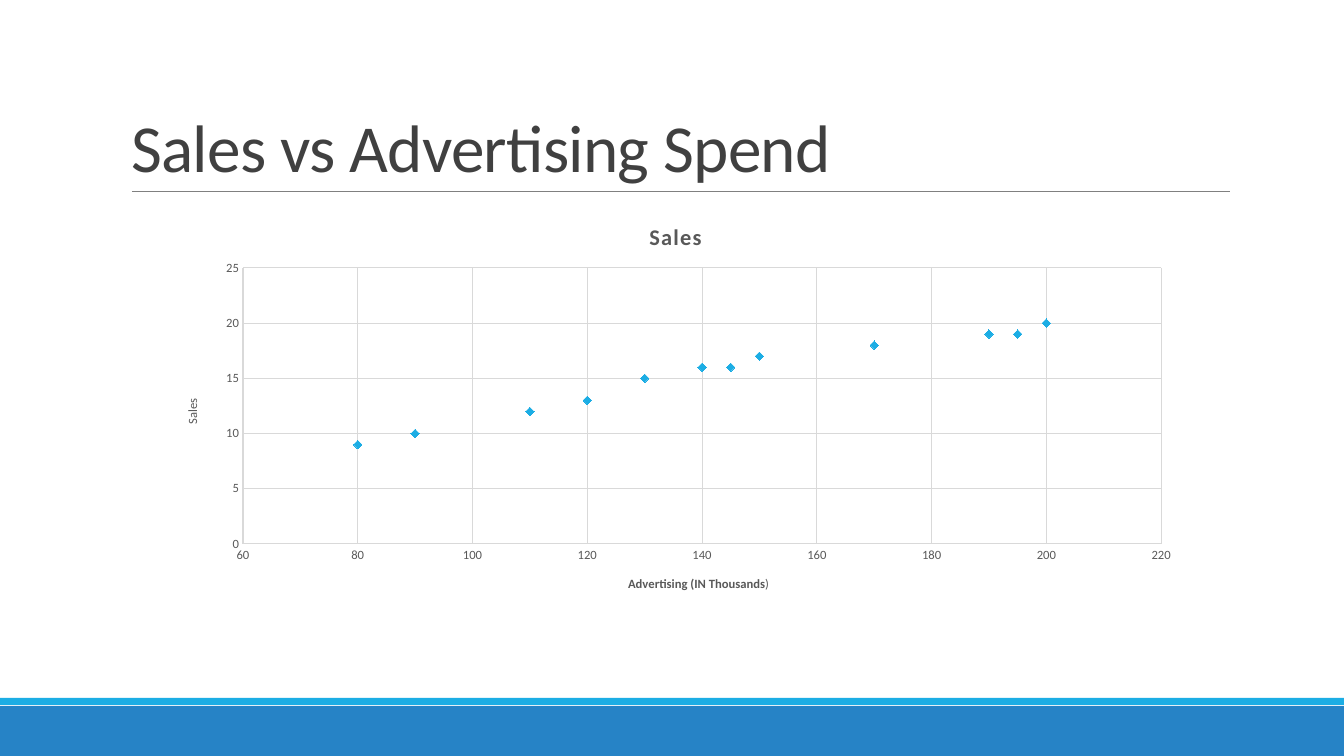
"""Build a slide with a scatter chart of sales against advertising spend."""
from lxml import etree
from pptx import Presentation
from pptx.chart.data import XyChartData
from pptx.dml.color import RGBColor
from pptx.enum.chart import XL_CHART_TYPE, XL_MARKER_STYLE, XL_TICK_MARK
from pptx.enum.shapes import MSO_CONNECTOR, MSO_SHAPE
from pptx.enum.text import MSO_ANCHOR, MSO_AUTO_SIZE, PP_ALIGN
from pptx.oxml.ns import qn
from pptx.util import Pt

PX = 9144000 / 1008
BLUE = RGBColor(0x26, 0x83, 0xC6)
CYAN = RGBColor(0x1C, 0xAD, 0xE4)
DARK = RGBColor(0x40, 0x40, 0x40)
TEXT = RGBColor(0x59, 0x59, 0x59)
RULE = RGBColor(0x80, 0x80, 0x80)
GRID = RGBColor(0xD9, 0xD9, 0xD9)
FONT = "Calibri"


def box(*lengths):
    return [round(n * PX) for n in lengths]


def write(tf, runs, size, color, spacing=0):
    p = tf.paragraphs[0]
    for text, bold in runs:
        r = p.add_run()
        r.text = text
        for name, value in {"name": FONT, "size": Pt(size), "bold": bold}.items():
            setattr(r.font, name, value)
        r.font.color.rgb = color
        r.font._element.set("spc", str(spacing))
    return p


prs = Presentation()
prs.slide_width, prs.slide_height = box(1344, 756)
s = prs.slides.add_slide(prs.slide_layouts[5])

for top, height, color in [(706, 50, BLUE), (698, 7, CYAN)]:
    sp = s.shapes.add_shape(MSO_SHAPE.RECTANGLE, *box(0, top, 1344, height))
    sp.shadow.inherit = False
    sp.fill.solid()
    sp.fill.fore_color.rgb = color
    sp.line.fill.background()

rule = s.shapes.add_connector(MSO_CONNECTOR.STRAIGHT, *box(132, 191, 1230, 191))
rule.line.color.rgb = RULE
rule.line.width = Pt(0.5)
etree.SubElement(rule._element.spPr, qn("a:effectLst"))

title = s.shapes.title
title.left, title.top, title.width, title.height = box(121, 31, 1109, 160)
tf = title.text_frame
for name, value in {"word_wrap": True, "auto_size": MSO_AUTO_SIZE.NONE,
                    "vertical_anchor": MSO_ANCHOR.BOTTOM}.items():
    setattr(tf, name, value)
p = write(tf, [("Sales vs Advertising Spend", False)], 48, DARK, -50)
p.alignment = PP_ALIGN.LEFT
p.line_spacing = 0.85

data = XyChartData()
sales = data.add_series("Sales")
for spend, amount in [(110, 12), (140, 16), (130, 15), (190, 19), (80, 9), (170, 18),
                      (120, 13), (150, 17), (145, 16), (200, 20), (90, 10), (195, 19)]:
    sales.add_data_point(spend, amount)
chart = s.shapes.add_chart(XL_CHART_TYPE.XY_SCATTER, *box(121, 204, 1109, 444), data).chart
chart.has_legend = False
chart.font.name = FONT
chart.font.size = Pt(10)
chart.has_title = True
chart.chart_title.include_in_layout = False
write(chart.chart_title.text_frame, [("Sales", True)], 16, TEXT, 100)

series = chart.plots[0].series[0]
series.format.line.fill.background()
series.marker.style = XL_MARKER_STYLE.DIAMOND
series.marker.size = 6
series.marker.format.fill.solid()
series.marker.format.fill.fore_color.rgb = CYAN
series.marker.format.line.color.rgb = CYAN
chart.plots[0].vary_by_categories = False

for axis, low, high, step, runs in [
    (chart.category_axis, 60, 220, 20, [("Advertising (IN Thousands", True), (")", False)]),
    (chart.value_axis, 0, 25, 5, [("Sales", False)]),
]:
    for name, value in {"minimum_scale": low, "maximum_scale": high, "major_unit": step,
                        "major_tick_mark": XL_TICK_MARK.NONE,
                        "minor_tick_mark": XL_TICK_MARK.NONE,
                        "has_major_gridlines": True, "has_title": True}.items():
        setattr(axis, name, value)
    for line in (axis.format.line, axis.major_gridlines.format.line):
        line.color.rgb = GRID
        line.width = Pt(0.75)
    font = axis.tick_labels.font
    font.name, font.size, font.color.rgb = FONT, Pt(9), TEXT
    write(axis.axis_title.text_frame, runs, 9, TEXT)

plot_area = chart._chartSpace.chart.plotArea
for old in plot_area.findall(qn("c:layout")):
    plot_area.remove(old)
layout = etree.Element(qn("c:layout"))
manual = etree.SubElement(layout, qn("c:manualLayout"))
for tag, value in [("layoutTarget", "inner"), ("xMode", "edge"), ("yMode", "edge"),
                   ("x", "0.11"), ("y", "0.144"), ("w", "0.828"), ("h", "0.622")]:
    etree.SubElement(manual, qn(f"c:{tag}")).set("val", value)
plot_area.insert(0, layout)

prs.save("out.pptx")
